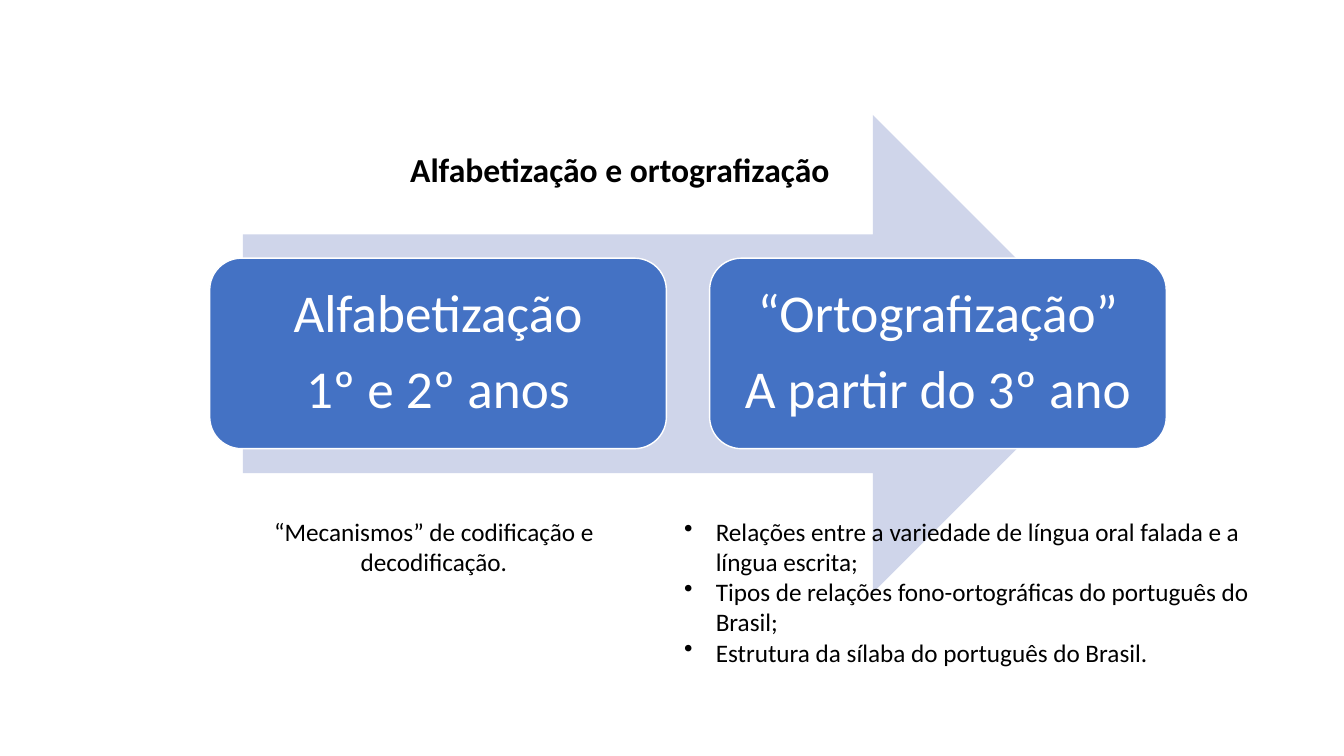
"""Build the slide on literacy and spelling stages."""
import dataclasses

import pptx
import pptx.dml.color
import pptx.enum.shapes
import pptx.enum.text
import pptx.oxml
import pptx.oxml.ns
import pptx.shapes.autoshape
import pptx.slide
import pptx.util

Pt = pptx.util.Pt
Form = pptx.enum.shapes.MSO_SHAPE
Align = pptx.enum.text.PP_ALIGN
Anchor = pptx.enum.text.MSO_ANCHOR

HUES: dict[str, str] = {
    "arrow": "CFD5EA",
    "card": "4472C4",
    "white": "FFFFFF",
    "black": "000000",
}
FONT = "Calibri"


@dataclasses.dataclass(frozen=True)
class Box:
    left: float
    top: float
    width: float
    height: float


@dataclasses.dataclass(frozen=True)
class Style:
    size: float
    hue: str = "black"
    bold: bool = False
    align: Align = Align.CENTER
    anchor: Anchor = Anchor.TOP
    line: float = 1.0
    after: float = 0
    bullet: bool = False
    wrap: bool = True


@dataclasses.dataclass(frozen=True)
class Note:
    box: Box
    text: str
    style: Style


TITLE = Note(
    Box(28.8, 70.6, 828, 104.4),
    "Alfabetização e ortografização",
    Style(24, bold=True, anchor=Anchor.MIDDLE, line=0.9),
)
NOTES = [
    Note(
        Box(481.7, 365, 456.5, 116.6),
        "Relações entre a variedade de língua oral falada e a língua escrita;\n"
        "Tipos de relações fono-ortográficas do português do Brasil;\n"
        "Estrutura da sílaba do português do Brasil.",
        Style(18, align=Align.LEFT, bullet=True),
    ),
    Note(
        Box(187.2, 365, 245.5, 51.1),
        "“Mecanismos” de codificação e\ndecodificação.",
        Style(18, wrap=False),
    ),
]
ARROW = Box(173.5, 82.1, 620.6, 341.3)
CARD = Box(149.8, 184.4, 326.2, 136.1)
PITCH = 357.1
STAGES = [
    "Alfabetização\n1º e 2º anos",
    "“Ortografização”\nA partir do 3º ano",
]
STAGE = Style(38, "white", anchor=Anchor.MIDDLE, line=0.9, after=13.3)


def hue(name: str) -> pptx.dml.color.RGBColor:
    """Return the named colour."""
    return pptx.dml.color.RGBColor.from_string(HUES[name])


def place(box: Box) -> list[int]:
    """Return the box as lengths for a shape."""
    return [Pt(size) for size in dataclasses.astuple(box)]


def add_bullet(para) -> None:
    """Give a paragraph a hanging bullet."""
    props = para._p.get_or_add_pPr()
    props.set("marL", str(Pt(22.5)))
    props.set("indent", str(-Pt(22.5)))
    mark = pptx.oxml.parse_xml(
        f'<a:buChar {pptx.oxml.ns.nsdecls("a")} char="•"/>'
    )
    props.append(mark)


def write(shape: pptx.shapes.autoshape.Shape, text: str, style: Style) -> None:
    """Fill a shape with styled text."""
    frame = shape.text_frame
    frame.text = text
    frame.word_wrap = style.wrap
    frame.vertical_anchor = style.anchor
    for para in frame.paragraphs:
        para.alignment = style.align
        para.line_spacing = style.line
        para.space_after = Pt(style.after)
        if style.bullet:
            add_bullet(para)
        for run in para.runs:
            run.font.name = FONT
            run.font.size = Pt(style.size)
            run.font.bold = style.bold
            run.font.color.rgb = hue(style.hue)


def add_note(slide: pptx.slide.Slide, note: Note) -> None:
    """Add a text box."""
    write(slide.shapes.add_textbox(*place(note.box)), note.text, note.style)


def add_form(
    slide: pptx.slide.Slide, form: Form, box: Box, fill: str
) -> pptx.shapes.autoshape.Shape:
    """Add a flat filled shape with no line."""
    shape = slide.shapes.add_shape(form, *place(box))
    shape.shadow.inherit = False
    shape.fill.solid()
    shape.fill.fore_color.rgb = hue(fill)
    shape.line.fill.background()
    return shape


def add_card(slide: pptx.slide.Slide, box: Box, text: str) -> None:
    """Add a rounded stage card."""
    card = add_form(slide, Form.ROUNDED_RECTANGLE, box, "card")
    card.line.color.rgb = hue("white")
    card.line.width = Pt(1)
    write(card, text, STAGE)


def main() -> None:
    """Build and save the slide."""
    deck = pptx.Presentation()
    deck.slide_width, deck.slide_height = Pt(960), Pt(540)
    slide = deck.slides.add_slide(deck.slide_layouts[6])
    add_note(slide, TITLE)
    add_form(slide, Form.RIGHT_ARROW, ARROW, "arrow")
    for step, text in enumerate(STAGES):
        box = dataclasses.replace(CARD, left=CARD.left + step * PITCH)
        add_card(slide, box, text)
    for note in NOTES:
        add_note(slide, note)
    deck.save("out.pptx")


if __name__ == "__main__":
    main()
